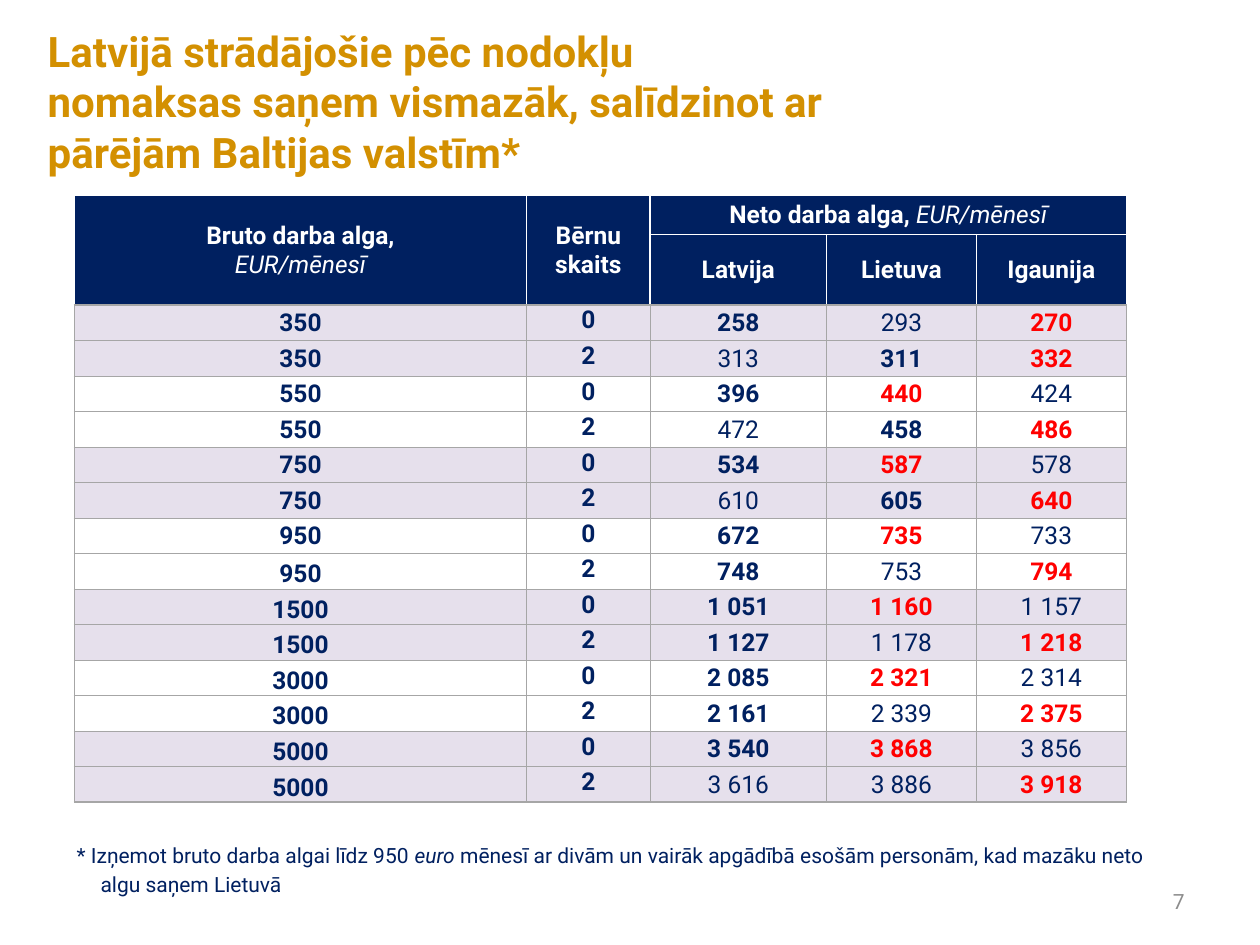
from lxml.etree import SubElement
from pptx import Presentation
from pptx.dml.color import RGBColor
from pptx.enum.text import MSO_ANCHOR as Anchor, PP_ALIGN as Align
from pptx.oxml.ns import qn
from pptx.util import Inches, Pt

NAVY, WHITE, LILAC, GREY, RED = "002060", "FFFFFF", "E6E0EC", "A6A6A6", "FF0000"
GOLD, PALE_GREY = "D39001", "8C8C8C"
ITALIC = {"bold": False, "italic": True}

TITLE = "Latvijā strādājošie pēc nodokļu nomaksas saņem vismazāk, salīdzinot ar pārējām Baltijas valstīm*"
FOOTNOTE = [
    ("* Izņemot bruto darba algai līdz 950 ", {}),
    ("euro ", {"italic": True}),
    ("mēnesī ar divām un vairāk apgādībā esošām personām, kad mazāku neto algu saņem Lietuvā", {}),
]
HEADERS = [
    (0, 0, 1, 0, [[("Bruto darba alga,", {})], [("EUR/mēnesī", ITALIC)]]),
    (0, 1, 1, 1, [[("Bērnu skaits", {})]]),
    (0, 2, 0, 4, [[("Neto darba alga, ", {}), ("EUR/mēnesī", ITALIC)]]),
    (1, 2, 1, 2, [[("Latvija", {})]]),
    (1, 3, 1, 3, [[("Lietuva", {})]]),
    (1, 4, 1, 4, [[("Igaunija", {})]]),
]
STYLES = {
    "b": {"bold": True, "color": NAVY},
    "n": {"bold": False, "color": NAVY},
    "r": {"bold": True, "color": RED},
}
SALARIES = [
    ("350", "0", "258", "293", "270", "bnr"),
    ("350", "2", "313", "311", "332", "nbr"),
    ("550", "0", "396", "440", "424", "brn"),
    ("550", "2", "472", "458", "486", "nbr"),
    ("750", "0", "534", "587", "578", "brn"),
    ("750", "2", "610", "605", "640", "nbr"),
    ("950", "0", "672", "735", "733", "brn"),
    ("950", "2", "748", "753", "794", "bnr"),
    ("1500", "0", "1 051", "1 160", "1 157", "brn"),
    ("1500", "2", "1 127", "1 178", "1 218", "bnr"),
    ("3000", "0", "2 085", "2 321", "2 314", "brn"),
    ("3000", "2", "2 161", "2 339", "2 375", "bnr"),
    ("5000", "0", "3 540", "3 868", "3 856", "brn"),
    ("5000", "2", "3 616", "3 886", "3 918", "nnr"),
]
COLUMN_WIDTHS = [3.59, 0.98, 1.4, 1.19, 1.19]
HEADER_HEIGHTS = [0.31, 0.56]
TABLE_HEIGHT = 4.82
FIRST_BOTTOM_ANCHORED = 7


def rgb(color):
    return RGBColor.from_string(color)


def write(frame, paragraphs, size=14, color=NAVY, bold=False, italic=False, align=Align.LEFT):
    if isinstance(paragraphs, str):
        paragraphs = [[(paragraphs, {})]]
    for index, runs in enumerate(paragraphs):
        paragraph = frame.add_paragraph() if index else frame.paragraphs[0]
        paragraph.alignment = align
        for text, changes in runs:
            style = {"bold": bold, "italic": italic, "color": color, **changes}
            run = paragraph.add_run()
            run.text = text
            run.font.name = "Roboto"
            run.font.size = Pt(size)
            run.font.bold = style["bold"]
            run.font.italic = style["italic"]
            run.font.color.rgb = rgb(style["color"])


def add_box(slide, left, top, width, height, paragraphs, anchor=Anchor.TOP, fill=None, **style):
    box = slide.shapes.add_textbox(Inches(left), Inches(top), Inches(width), Inches(height))
    if fill:
        box.fill.solid()
        box.fill.fore_color.rgb = rgb(fill)
    box.text_frame.word_wrap = True
    box.text_frame.vertical_anchor = anchor
    write(box.text_frame, paragraphs, **style)
    return box.text_frame


def set_borders(cell, borders):
    properties = cell._tc.get_or_add_tcPr()
    for side in "LRTB":
        color, width = borders[side]
        line = SubElement(properties, qn(f"a:ln{side}"), w=str(Pt(width)))
        SubElement(SubElement(line, qn("a:solidFill")), qn("a:srgbClr"), val=color)


def cell_borders(row, column, last_row, last_column):
    if row < 2:
        inner = 0.5 if column > 1 else 1
        return {
            "L": (WHITE, 1),
            "R": (WHITE, 1),
            "T": (WHITE, inner if row else 1),
            "B": (GREY, 1) if row or column < 2 else (WHITE, 0.5),
        }
    edges = {"L": column == 0, "R": column == last_column, "T": row == 2, "B": row == last_row}
    return {side: (GREY, 1 if outer else 0.5) for side, outer in edges.items()}


def add_salary_table(slide):
    row_count = len(HEADER_HEIGHTS) + len(SALARIES)
    column_count = len(COLUMN_WIDTHS)
    data_height = (TABLE_HEIGHT - sum(HEADER_HEIGHTS)) / len(SALARIES)
    table = slide.shapes.add_table(
        row_count, column_count, Inches(0.59), Inches(1.55), Inches(sum(COLUMN_WIDTHS)), Inches(TABLE_HEIGHT)
    ).table
    for column, width in zip(table.columns, COLUMN_WIDTHS):
        column.width = Inches(width)
    for row, height in zip(table.rows, HEADER_HEIGHTS + [data_height] * len(SALARIES)):
        row.height = Inches(height)

    for row in range(row_count):
        for column in range(column_count):
            cell = table.cell(row, column)
            cell.margin_left = cell.margin_right = cell.margin_top = Inches(0.01)
            cell.margin_bottom = 0
            cell.vertical_anchor = Anchor.MIDDLE
            set_borders(cell, cell_borders(row, column, row_count - 1, column_count - 1))
            cell.fill.solid()
            band = WHITE if (row - 2) // 2 % 2 else LILAC
            cell.fill.fore_color.rgb = rgb(NAVY if row < 2 else band)

    for top, left, bottom, right, paragraphs in HEADERS:
        cell = table.cell(top, left)
        if (top, left) != (bottom, right):
            cell.merge(table.cell(bottom, right))
        write(cell.text_frame, paragraphs, color=WHITE, bold=True, align=Align.CENTER)

    for index, (*values, marks) in enumerate(SALARIES):
        for column, (value, mark) in enumerate(zip(values, "bb" + marks)):
            cell = table.cell(index + 2, column)
            if column == 1:
                cell.vertical_anchor = Anchor.TOP
            elif column == 0 and index >= FIRST_BOTTOM_ANCHORED:
                cell.vertical_anchor = Anchor.BOTTOM
            write(cell.text_frame, value, align=Align.CENTER, **STYLES[mark])


def main():
    presentation = Presentation()
    presentation.slide_width, presentation.slide_height = Inches(10), Inches(7.5)
    slide = presentation.slides.add_slide(presentation.slide_layouts[6])

    add_box(slide, 7.17, 6.95, 2.33, 0.4, "7", anchor=Anchor.MIDDLE, size=12, color=PALE_GREY, align=Align.RIGHT)
    add_box(slide, 0.28, 0.21, 6.38, 1.18, TITLE, anchor=Anchor.MIDDLE, fill=WHITE, size=24, color=GOLD, bold=True)
    add_salary_table(slide)

    footnote = add_box(slide, 0.51, 6.61, 8.67, 0.57, [FOOTNOTE], fill=WHITE, size=12, align=Align.JUSTIFY)
    paragraph = footnote.paragraphs[0]
    paragraph.line_spacing = 1.15
    paragraph.space_after = Pt(4)
    properties = paragraph._p.get_or_add_pPr()
    properties.set("marL", str(Inches(0.19)))
    properties.set("indent", str(Inches(-0.19)))

    presentation.save("out.pptx")


if __name__ == "__main__":
    main()
